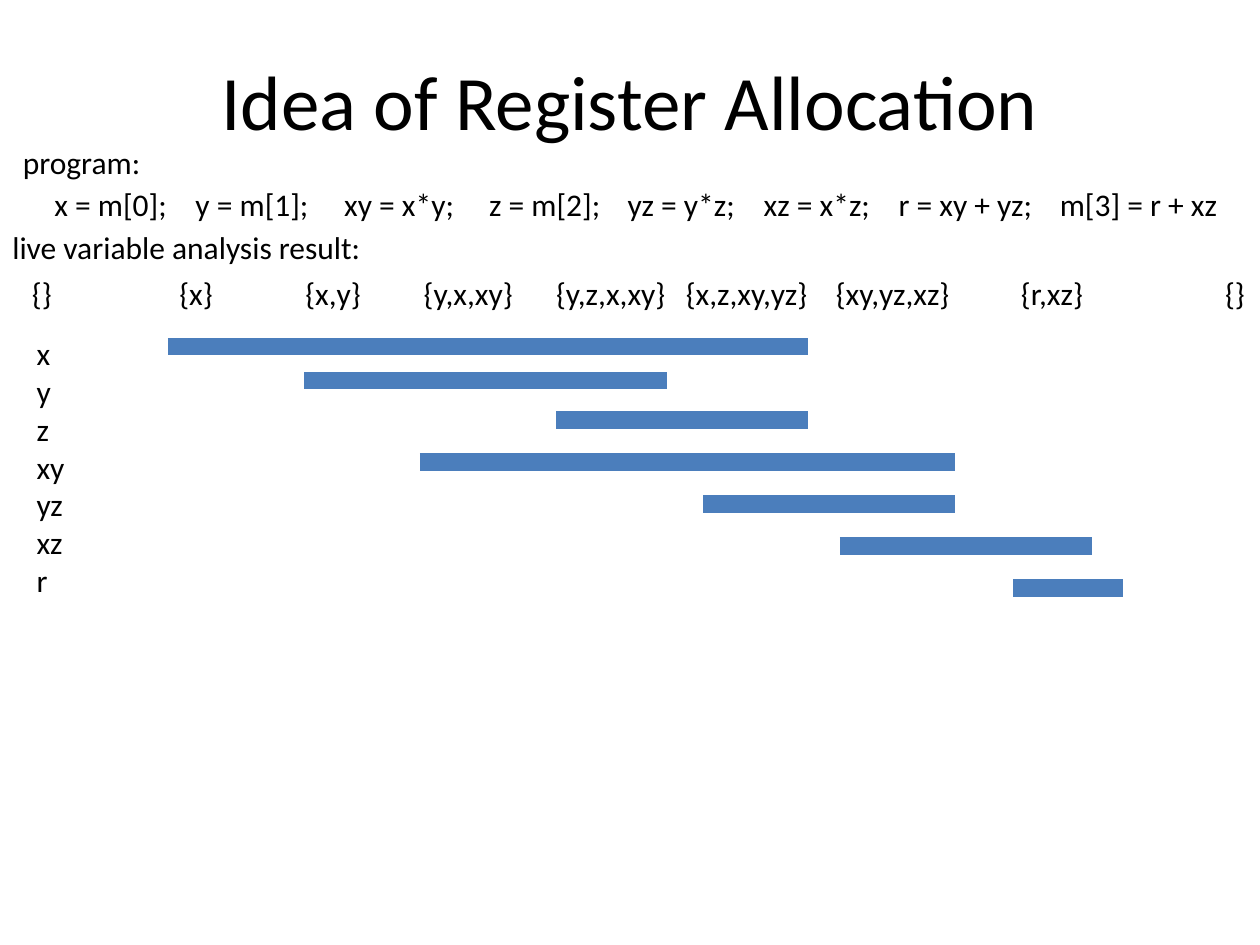
from dataclasses import dataclass

from lxml import etree
from pptx import Presentation
from pptx.dml.color import RGBColor
from pptx.enum.shapes import MSO_CONNECTOR
from pptx.enum.text import MSO_ANCHOR, MSO_AUTO_SIZE, PP_ALIGN
from pptx.oxml.ns import qn
from pptx.util import Emu, Inches, Pt

STRAIGHT = MSO_CONNECTOR.STRAIGHT
MIDDLE = MSO_ANCHOR.MIDDLE
FIT_SHAPE = MSO_AUTO_SIZE.SHAPE_TO_FIT_TEXT
CENTER, LEFT = PP_ALIGN.CENTER, PP_ALIGN.LEFT

SLIDE_WIDTH, SLIDE_HEIGHT = 10, 7.5
CELLS_PER_INCH = 12
FONT = "Calibri"
TEXT_COLOR = "000000"
BAR_COLOR = "4B7EBC"
BAR_WEIGHT = 10
LINE_ROWS = 4.8


@dataclass(frozen=True)
class LiveRange:
    variable: str
    start: float
    end: float
    row: float


@dataclass(frozen=True)
class Column:
    text: str
    tab: float


STATEMENTS = [
    Column("x = m[0];", 0),
    Column("y = m[1];", 1.12),
    Column("xy = x*y;", 2.3),
    Column("z = m[2];", 3.45),
    Column("yz = y*z;", 4.55),
    Column("xz = x*z;", 5.63),
    Column("r = xy + yz;", 6.7),
    Column("m[3] = r + xz", 7.98),
]

LIVE_SETS = [
    Column("{}", 0),
    Column("{x}", 1.17),
    Column("{x,y}", 2.17),
    Column("{y,x,xy}", 3.11),
    Column("{y,z,x,xy}", 4.16),
    Column("{x,z,xy,yz}", 5.19),
    Column("{xy,yz,xz}", 6.38),
    Column("{r,xz}", 7.85),
    Column("{}", 9.47),
]

LIVE_RANGES = [
    LiveRange("x", 16, 77, 33),
    LiveRange("y", 29, 63.5, 36.25),
    LiveRange("z", 53, 77, 40),
    LiveRange("xy", 40, 91, 44),
    LiveRange("yz", 67, 91, 48),
    LiveRange("xz", 80, 104, 52),
    LiveRange("r", 96.5, 107, 56),
]


def grid(cells: float) -> Emu:
    return Inches(cells / CELLS_PER_INCH)


def color(value: str) -> RGBColor:
    return RGBColor.from_string(value)


def write_text(frame, text: str, *, size: float = 18, align=LEFT) -> None:
    frame.text = text
    for paragraph in frame.paragraphs:
        paragraph.alignment = align
        for run in paragraph.runs:
            run.font.name = FONT
            run.font.size = Pt(size)
            run.font.color.rgb = color(TEXT_COLOR)


def add_text(slide, text: str, column: float, row: float, columns: float,
             rows: float = LINE_ROWS):
    box = slide.shapes.add_textbox(grid(column), grid(row), grid(columns), grid(rows))
    frame = box.text_frame
    frame.word_wrap = True
    frame.auto_size = FIT_SHAPE
    write_text(frame, text)
    return frame


def add_columns(slide, items: list[Column], column: float, row: float,
                columns: float, inset: float) -> None:
    text = "\t".join(item.text for item in items)
    frame = add_text(slide, text, column, row, columns)
    frame.margin_left = Inches(inset)
    frame.margin_right = 0
    properties = frame.paragraphs[0]._p.get_or_add_pPr()
    tabs = etree.SubElement(properties, qn("a:tabLst"))
    for item in items[1:]:
        etree.SubElement(tabs, qn("a:tab"), pos=str(Inches(item.tab)), algn="l")


def add_bar(slide, live_range: LiveRange) -> None:
    bar = slide.shapes.add_connector(
        STRAIGHT, grid(live_range.start), grid(live_range.row),
        grid(live_range.end), grid(live_range.row))
    bar.line.color.rgb = color(BAR_COLOR)
    bar.line.width = Pt(BAR_WEIGHT)
    etree.SubElement(bar._element.spPr, qn("a:effectLst"))


def set_title(slide, text: str) -> None:
    title = slide.shapes.title
    title.left, title.top = Inches(0.05 * SLIDE_WIDTH), Inches(0.04 * SLIDE_HEIGHT)
    title.width, title.height = Inches(0.9 * SLIDE_WIDTH), Inches(0.13 * SLIDE_HEIGHT)
    title.text_frame.vertical_anchor = MIDDLE
    write_text(title.text_frame, text, size=44, align=CENTER)


def main() -> None:
    presentation = Presentation()
    presentation.slide_width = Inches(SLIDE_WIDTH)
    presentation.slide_height = Inches(SLIDE_HEIGHT)
    slide = presentation.slides.add_slide(presentation.slide_layouts[5])

    set_title(slide, "Idea of Register Allocation")
    add_columns(slide, STATEMENTS, 4, 17, 115, inset=0.1)
    variables = "\n".join(live_range.variable for live_range in LIVE_RANGES)
    add_text(slide, variables, 2.3, 31.25, 6, 26.6)
    add_columns(slide, LIVE_SETS, 1, 25.5, 119, inset=0.17)
    add_text(slide, "live variable analysis result:", 0, 21.1, 36)
    add_text(slide, "program:", 1, 13, 36)
    for live_range in LIVE_RANGES:
        add_bar(slide, live_range)

    presentation.save("out.pptx")


if __name__ == "__main__":
    main()
